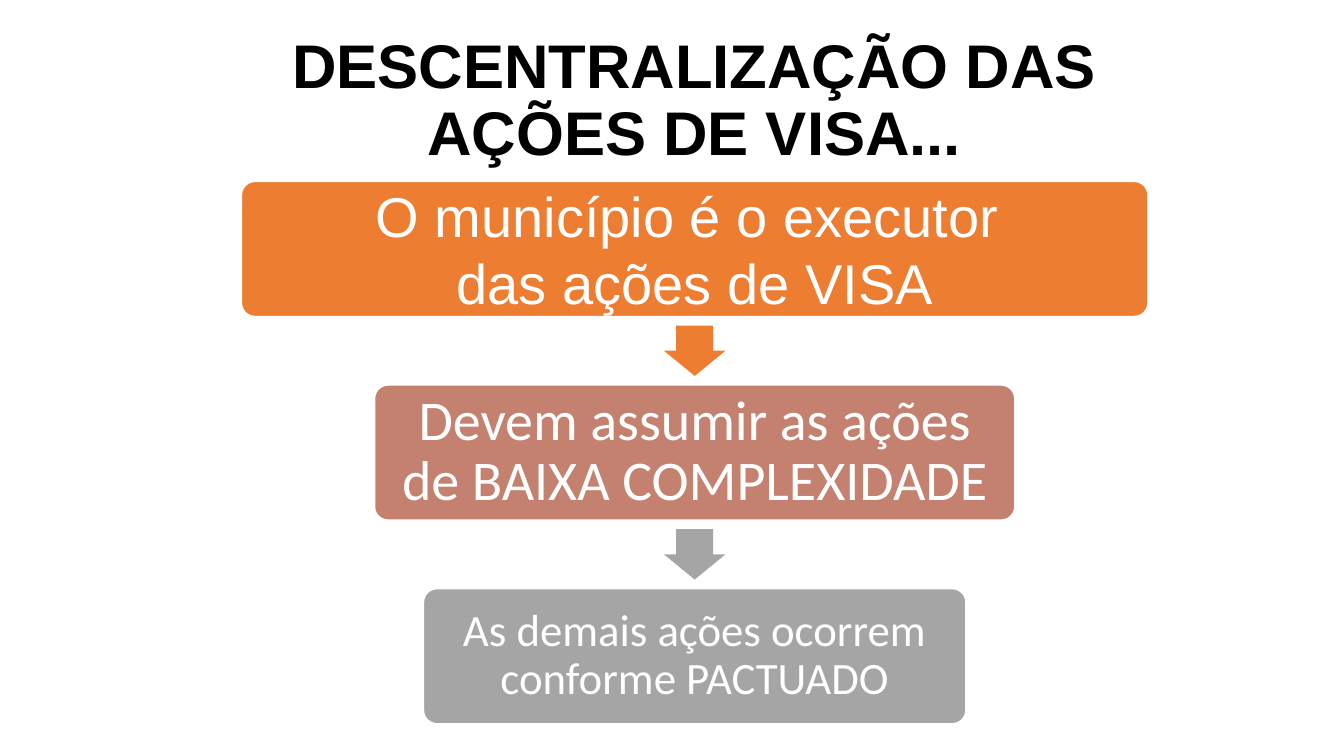
from pptx import Presentation
from pptx.dml.color import RGBColor
from pptx.enum.shapes import MSO_SHAPE as Preset
from pptx.enum.text import MSO_ANCHOR as Anchor, PP_ALIGN as Align
from pptx.util import Inches, Pt

BLACK = RGBColor(0x00, 0x00, 0x00)
WHITE = RGBColor(0xFF, 0xFF, 0xFF)
ORANGE = RGBColor(0xED, 0x7D, 0x31)
ROSE = RGBColor(0xC4, 0x81, 0x70)
GRAY = RGBColor(0xA5, 0xA5, 0xA5)

# Layout of the flow, in inches
CENTER_X = 6.89
FIRST_TOP = 1.8
PITCH = 2.02
STEP_HEIGHT = 1.34
ARROW_LENGTH, ARROW_SPAN = 0.5, 0.61

# Width, fill, lines, line spacing, inset, font
STEPS = [
    (8.99, ORANGE, ["O município é o executor ", "das ações de VISA"], 1.0, 0.17,
     {"name": "Arial", "size": Pt(40)}),
    (6.35, ROSE, ["Devem assumir as ações de BAIXA COMPLEXIDADE"], 0.9, 0.17,
     {"name": "Calibri", "size": Pt(40)}),
    (5.38, GRAY, ["As demais ações ocorrem conforme PACTUADO"], 0.9, 0.13,
     {"name": "Calibri", "size": Pt(32)}),
]


def set_all(target, values):
    for name, value in values.items():
        setattr(target, name, value)


def write_text(shape, lines, spacing, inset, font, color):
    frame = shape.text_frame
    sides = ("left", "top", "right", "bottom")
    set_all(frame, {f"margin_{side}": Inches(inset) for side in sides})
    set_all(frame, {"word_wrap": True, "vertical_anchor": Anchor.MIDDLE})
    for index, line in enumerate(lines):
        para = frame.add_paragraph() if index else frame.paragraphs[0]
        set_all(para, {"alignment": Align.CENTER, "line_spacing": spacing})
        span = para.add_run()
        span.text = line
        set_all(span.font, font)
        span.font.color.rgb = color


def add_title(page, text):
    box = page.shapes.add_textbox(Inches(1.9), Inches(0.8), Inches(9.98), Inches(0.42))
    font = {"name": "Arial", "size": Pt(44), "bold": True}
    write_text(box, [text], 0.9, 0.1, font, BLACK)


def add_filled(page, preset, center_y, width, height, fill, adjustments):
    shape = page.shapes.add_shape(
        preset, Inches(CENTER_X - width / 2), Inches(center_y - height / 2),
        Inches(width), Inches(height))
    shape.shadow.inherit = False
    shape.fill.solid()
    shape.fill.fore_color.rgb = fill
    for index, value in enumerate(adjustments):
        shape.adjustments[index] = value
    return shape


def add_step(page, center_y, width, fill, lines, spacing, inset, font):
    box = add_filled(page, Preset.ROUNDED_RECTANGLE, center_y, width, STEP_HEIGHT, fill, [0.1])
    box.line.color.rgb = WHITE
    box.line.width = Pt(1)
    write_text(box, lines, spacing, inset, font, WHITE)


def add_down_arrow(page, center_y, fill):
    arrow = add_filled(page, Preset.RIGHT_ARROW, center_y, ARROW_LENGTH, ARROW_SPAN,
                       fill, [0.6, 0.5])
    arrow.rotation = 90
    arrow.line.fill.background()


def main():
    deck = Presentation()
    set_all(deck, {"slide_width": Inches(13.33), "slide_height": Inches(7.5)})
    page = deck.slides.add_slide(deck.slide_layouts[6])

    add_title(page, "DESCENTRALIZAÇÃO DAS AÇÕES DE VISA...")

    # Steps from top to bottom, with an arrow halfway between neighbours
    arrow_fills = [ORANGE, GRAY]
    for index, step in enumerate(STEPS):
        center_y = FIRST_TOP + STEP_HEIGHT / 2 + index * PITCH
        add_step(page, center_y, *step)
        if index < len(arrow_fills):
            add_down_arrow(page, center_y + PITCH / 2, arrow_fills[index])

    deck.save("out.pptx")


if __name__ == "__main__":
    main()
